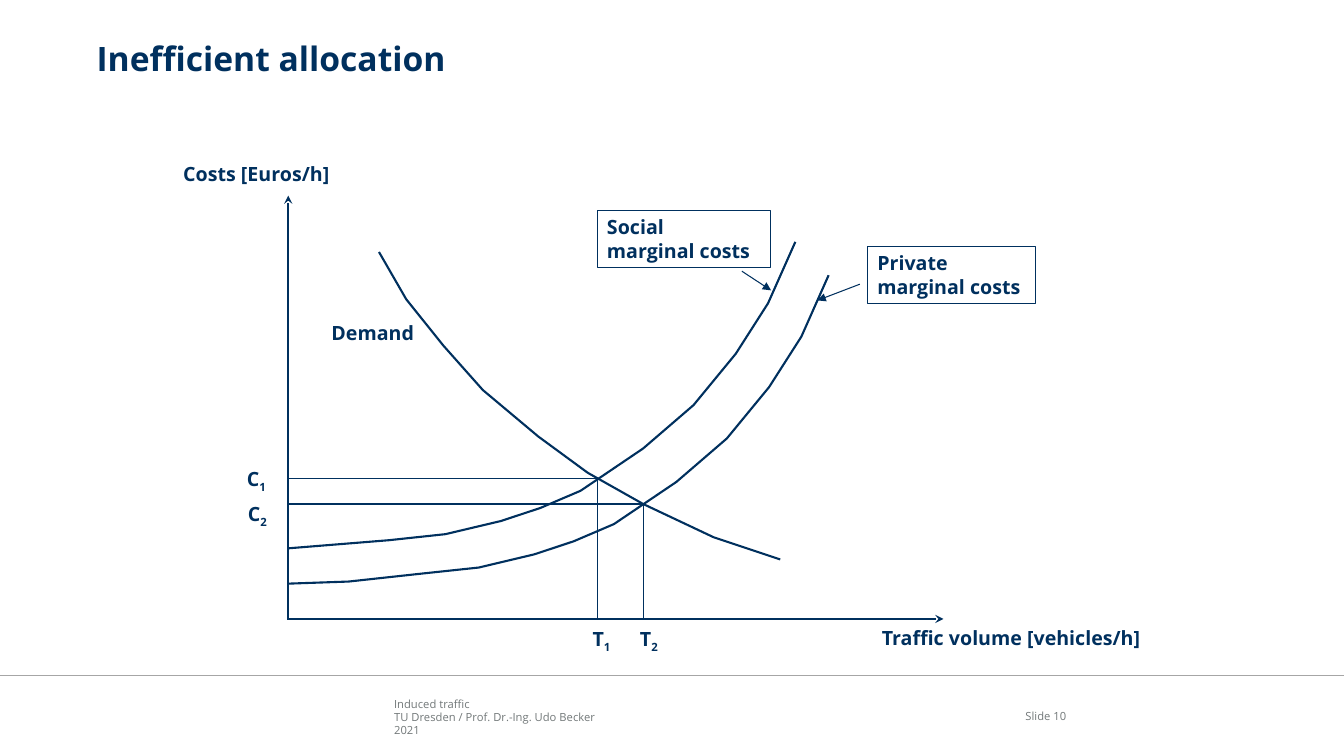
from lxml.etree import SubElement
from pptx import Presentation
from pptx.dml.color import RGBColor
from pptx.enum.shapes import MSO_CONNECTOR, MSO_SHAPE
from pptx.enum.text import MSO_ANCHOR, PP_ALIGN
from pptx.oxml.ns import qn
from pptx.util import Pt


def color(code):
    return RGBColor.from_string(code)


class Canvas:
    navy = "00305E"
    gray = "727879"
    rule = "A6A6A6"
    face = "Open Sans"

    def __init__(self, slide):
        self.slide = slide
        self.shapes = slide.shapes

    def style(self, para, size, code, bold, align=PP_ALIGN.LEFT):
        para.alignment = align
        font = para.font
        font.name = self.face
        font.size = Pt(size)
        font.bold = bold
        font.color.rgb = color(code)

    def frame(self, shape, anchor, pad):
        frame = shape.text_frame
        frame.word_wrap = True
        frame.vertical_anchor = anchor
        if not pad:
            frame.margin_left = frame.margin_right = 0
            frame.margin_top = frame.margin_bottom = 0
        return frame

    def title(self, words, left, top, width, height):
        shape = self.shapes.title
        shape.left, shape.top = Pt(left), Pt(top)
        shape.width, shape.height = Pt(width), Pt(height)
        frame = self.frame(shape, MSO_ANCHOR.TOP, False)
        frame.text = words
        self.style(frame.paragraphs[0], 24, self.navy, True)

    def label(self, words, left, top, width, height=23, sub=""):
        shape = self.shapes.add_textbox(Pt(left), Pt(top), Pt(width), Pt(height))
        para = self.frame(shape, MSO_ANCHOR.TOP, True).paragraphs[0]
        self.style(para, 14, self.navy, True)
        para.add_run().text = words
        if sub:
            run = para.add_run()
            run.text = sub
            run.font._element.set("baseline", "-25000")

    def box(self, words, left, top, width, height):
        shape = self.shapes.add_shape(
            MSO_SHAPE.RECTANGLE, Pt(left), Pt(top), Pt(width), Pt(height))
        self.outline(shape, 0.75)
        frame = self.frame(shape, MSO_ANCHOR.TOP, True)
        frame.text = words
        self.style(frame.paragraphs[0], 14, self.navy, True)

    def foot(self, words, left, top, width, height, anchor, align):
        shape = self.shapes.add_textbox(Pt(left), Pt(top), Pt(width), Pt(height))
        frame = self.frame(shape, anchor, False)
        frame.text = words
        for para in frame.paragraphs:
            self.style(para, 8, self.gray, False, align)

    def outline(self, shape, weight):
        shape.shadow.inherit = False
        shape.fill.background()
        shape.line.color.rgb = color(self.navy)
        shape.line.width = Pt(weight)

    def line(self, start, end, weight=0.75, head="", code=navy):
        ends = [Pt(n) for n in (*start, *end)]
        shape = self.shapes.add_connector(MSO_CONNECTOR.STRAIGHT, *ends)
        shape.line.color.rgb = color(code)
        shape.line.width = Pt(weight)
        props = shape._element.spPr
        if head:
            SubElement(props.get_or_add_ln(), qn("a:tailEnd"), type=head)
        SubElement(props, qn("a:effectLst"))

    def curve(self, points):
        first, *rest = [(Pt(x), Pt(y)) for x, y in points]
        path = self.shapes.build_freeform(*first, scale=1.0)
        path.add_line_segments(rest, close=False)
        self.outline(path.convert_to_shape(), 1.5)


def main():
    deck = Presentation()
    deck.slide_width, deck.slide_height = Pt(960), Pt(540)
    art = Canvas(deck.slides.add_slide(deck.slide_layouts[5]))

    art.foot("Induced traffic\nTU Dresden / Prof. Dr.-Ing. Udo Becker\n2021",
             281.5, 497.5, 408, 29, MSO_ANCHOR.BOTTOM, PP_ALIGN.LEFT)
    art.line((0, 482.4), (960, 482.4), 1, code=art.rule)
    art.foot("Slide 10", 706.3, 497, 55.4, 29, MSO_ANCHOR.MIDDLE, PP_ALIGN.RIGHT)
    art.title("Inefficient allocation", 69, 27.4, 833, 54)

    left, base = 205.9, 442.1
    art.line((left, base + 0.7), (left, 139.7), 1.5, "stealth")
    art.line((left, base), (673.9, base), 1.5, "stealth")

    social = [(left, 391.7), (277.9, 385.9), (318.2, 381.6), (357.8, 372.2),
              (385.9, 362.9), (414.7, 350.6), (459.4, 320.4), (495.4, 289.4),
              (525.6, 252.7), (548.6, 216.7), (568.1, 172.8)]
    demand = [(270.7, 180), (290.2, 213.8), (316.8, 247), (344.9, 278.6),
              (384.5, 311.8), (419.8, 337.7), (459.4, 360), (509.8, 383.8),
              (557.3, 399.6)]
    shift = 23.8
    private = [(left, 416.9), (249.1, 415.4)]
    private += [(x + shift, y + shift) for x, y in social[1:]]
    for points in (social, demand, private):
        art.curve(points)

    art.label("Traffic volume [vehicles/h]", 622.8, 443.5, 213)
    art.label("Costs [Euros/h]", 123.8, 112.3, 138.2)
    art.label("Demand", 229.7, 225.4, 160.6)
    art.box("Social\vmarginal costs", 426.5, 150.2, 123.6, 41.2)
    art.box("Private\vmarginal costs", 619.6, 175.8, 119.9, 41.2)
    art.line((529.9, 193.7), (550.8, 207.4), head="triangle")
    art.line((614.2, 203), (583.9, 214.6), head="triangle")

    for x, y in ((426.7, 341.5), (459.4, 360)):
        art.line((x, y), (x, base))
        art.line((x, y), (left, y))

    marks = (("C", "1", 169.2, 329.8), ("C", "2", 169.9, 355),
             ("T", "1", 416.2, 444.2), ("T", "2", 450, 444.2))
    for name, sub, x, y in marks:
        art.label(name, x, y, 33.1, sub=sub)

    deck.save("out.pptx")


if __name__ == "__main__":
    main()
